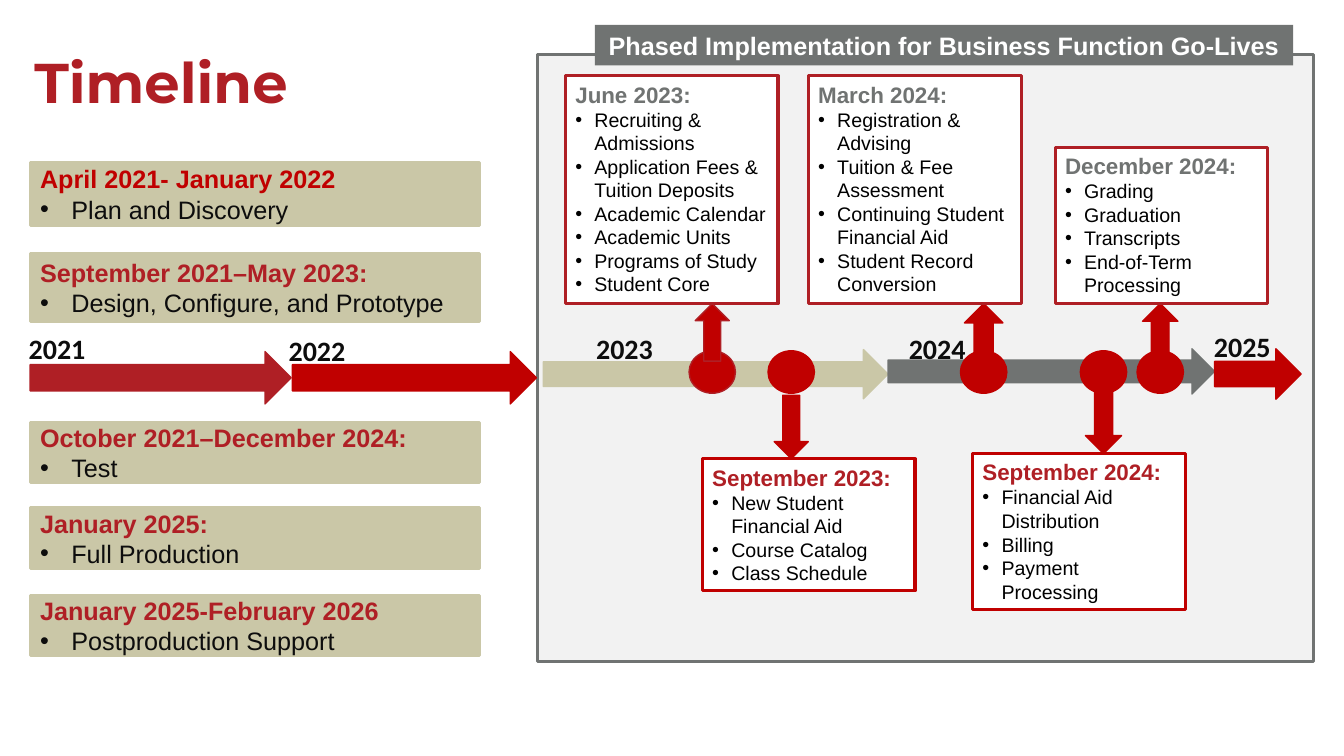
from collections import namedtuple
from dataclasses import dataclass

from lxml import etree
from pptx import Presentation
from pptx.dml.color import RGBColor
from pptx.enum.shapes import MSO_SHAPE
from pptx.enum.text import MSO_ANCHOR, MSO_AUTO_SIZE, PP_ALIGN
from pptx.oxml.ns import qn
from pptx.util import Cm, Pt

RECT = MSO_SHAPE.RECTANGLE
ARROW = MSO_SHAPE.RIGHT_ARROW
OVAL = MSO_SHAPE.OVAL
TOP, MIDDLE = MSO_ANCHOR.TOP, MSO_ANCHOR.MIDDLE
LEFT, CENTER = PP_ALIGN.LEFT, PP_ALIGN.CENTER
GROW, FIXED = MSO_AUTO_SIZE.SHAPE_TO_FIT_TEXT, MSO_AUTO_SIZE.NONE


@dataclass(frozen=True)
class Theme:
    crimson: str = "AF1F25"
    red: str = "C00000"
    grey: str = "707372"
    sand: str = "CAC7A7"
    panel: str = "F2F2F2"
    white: str = "FFFFFF"
    black: str = "000000"
    ink: str = "0D0D0D"
    title_font: str = "Montserrat"
    font: str = "Arial"
    year_font: str = "Calibri"
    title_size: int = 40
    year_size: int = 20
    stage_size: int = 18
    card_size: int = 16
    item_size: int = 14
    thin: float = 1
    thick: float = 2.25


T = Theme()
Milestone = namedtuple("Milestone", "heading items card up dot_x length thickness edge")

TITLE = "Timeline"
BANNER = "Phased Implementation for Business Function Go-Lives"
STAGES = [
    ("April 2021- January 2022", "Plan and Discovery", 4.09, 1.6, T.red),
    ("September 2021–May 2023:", "Design, Configure, and Prototype", 6.38, 1.73, T.crimson),
    ("October 2021–December 2024:", "Test", 10.64, 1.52, T.crimson),
    ("January 2025:", "Full Production", 12.8, 1.52, T.crimson),
    ("January 2025-February 2026", "Postproduction Support", 15.01, 1.52, T.crimson),
]
YEARS = [
    ("2021", 1.44, 8.23, (0.76, 8.86, 6.58, 1.32), T.crimson),
    ("2022", 7.99, 8.28, (7.37, 8.86, 6.15, 1.32), T.red),
    ("2023", 15.74, 8.23, (13.69, 8.81, 8.69, 1.24), T.sand),
    ("2024", 23.62, 8.23, (22.38, 8.79, 8.23, 1.14), T.grey),
    ("2025", 31.31, 8.18, (30.61, 8.79, 2.18, 1.27), T.red),
]
MILESTONES = [
    Milestone("June 2023:",
              ["Recruiting & Admissions", "Application Fees & Tuition Deposits",
               "Academic Calendar", "Academic Units", "Programs of Study", "Student Core"],
              (14.25, 1.91, 5.36, 5.74), True, 17.95, 1.45, 0.86, T.crimson),
    Milestone("September 2023:",
              ["New Student Financial Aid", "Course Catalog", "Class Schedule"],
              (17.7, 11.56, 5.36, 3.33), False, 19.94, 1.6, 0.86, T.red),
    Milestone("March 2024:",
              ["Registration & Advising", "Tuition & Fee Assessment",
               "Continuing Student Financial Aid", "Student Record Conversion"],
              (20.37, 1.91, 5.38, 5.74), True, 24.79, 1.37, 0.97, T.red),
    Milestone("September 2024:",
              ["Financial Aid Distribution", "Billing", "Payment Processing"],
              (24.51, 11.43, 5.36, 3.94), False, 27.81, 1.55, 0.91, T.red),
    Milestone("December 2024:",
              ["Grading", "Graduation", "Transcripts", "End-of-Term Processing"],
              (26.59, 3.71, 5.36, 3.94), True, 29.24, 1.42, 0.89, T.red),
]
DOT_TOP, DOT_W, DOT_H = 8.84, 1.17, 1.07
YEAR_W, YEAR_H = 2.2, 1.12
STAGE_LEFT, STAGE_W = 0.76, 11.33


def rgb(color):
    return RGBColor.from_string(color)


def add_block(s, kind, box, fill, line=None, weight=T.thin):
    sp = s.shapes.add_shape(kind, *map(Cm, box))
    sp.shadow.inherit = False
    sp.fill.solid()
    sp.fill.fore_color.rgb = rgb(fill)
    if line:
        sp.line.color.rgb = rgb(line)
        sp.line.width = Pt(weight)
    else:
        sp.line.fill.background()
    return sp


def frame(sp, anchor=TOP, fit=FIXED):
    tf = sp.text_frame
    tf.word_wrap = True
    tf.auto_size = fit
    tf.vertical_anchor = anchor
    return tf


def write(p, text, size, color, bold=False, font=T.font, align=LEFT):
    p.alignment = align
    r = p.add_run()
    r.text = text
    r.font.name = font
    r.font.size = Pt(size)
    r.font.bold = bold
    r.font.color.rgb = rgb(color)


def add_bullet(p, indent):
    pPr = p._p.get_or_add_pPr()
    pPr.set("marL", str(Cm(indent)))
    pPr.set("indent", str(-Cm(indent)))
    etree.SubElement(pPr, qn("a:buFont")).set("typeface", T.font)
    etree.SubElement(pPr, qn("a:buChar")).set("char", "•")


def write_list(tf, heading, items, heading_style, item_style, indent):
    write(tf.paragraphs[0], heading, *heading_style, bold=True)
    for item in items:
        p = tf.add_paragraph()
        write(p, item, *item_style)
        add_bullet(p, indent)


def add_title(s):
    sp = s.shapes.title
    sp.left, sp.top, sp.width, sp.height = map(Cm, (0.61, 1.02, 12.22, 2.24))
    p = frame(sp, MIDDLE).paragraphs[0]
    p.line_spacing = 0.9
    write(p, TITLE, T.title_size, T.crimson, True, T.title_font)


def add_milestone(s, m):
    left, top, width, height = m.card
    add_block(s, OVAL, (m.dot_x - DOT_W / 2, DOT_TOP, DOT_W, DOT_H), T.red, m.edge)
    middle = top + height + m.length / 2 if m.up else top - m.length / 2
    box = (m.dot_x - m.length / 2, middle - m.thickness / 2, m.length, m.thickness)
    add_block(s, ARROW, box, T.red, m.edge).rotation = 270 if m.up else 90
    card = add_block(s, RECT, m.card, T.white, T.crimson if m.up else T.red, T.thick)
    write_list(frame(card, fit=GROW), m.heading, m.items,
               (T.card_size, T.grey if m.up else T.crimson), (T.item_size, T.black), 0.48)


def add_year(s, year, center, top):
    sp = s.shapes.add_textbox(*map(Cm, (center - YEAR_W / 2, top, YEAR_W, YEAR_H)))
    write(frame(sp, fit=GROW).paragraphs[0], year, T.year_size, T.ink, True, T.year_font, CENTER)


def add_stage(s, heading, item, top, height, color):
    sp = add_block(s, RECT, (STAGE_LEFT, top, STAGE_W, height), T.sand, T.sand, T.thick)
    write_list(frame(sp, MIDDLE), heading, [item],
               (T.stage_size, color), (T.stage_size, T.ink), 0.79)


def main():
    prs = Presentation()
    prs.slide_width, prs.slide_height = Cm(33.87), Cm(19.05)
    s = prs.slides.add_slide(prs.slide_layouts[5])
    add_title(s)
    add_block(s, RECT, (13.54, 1.37, 19.56, 15.29), T.panel, T.grey, T.thick)
    for _, _, _, box, color in YEARS:
        add_block(s, ARROW, box, color, color)
    for m in MILESTONES:
        add_milestone(s, m)
    for year, center, top, _, _ in YEARS:
        add_year(s, year, center, top)
    banner = add_block(s, RECT, (14.99, 0.63, 17.6, 1.02), T.grey)
    write(frame(banner, fit=GROW).paragraphs[0], BANNER, T.stage_size, T.white, True, align=CENTER)
    for stage in STAGES:
        add_stage(s, *stage)
    prs.save("out.pptx")


if __name__ == "__main__":
    main()
